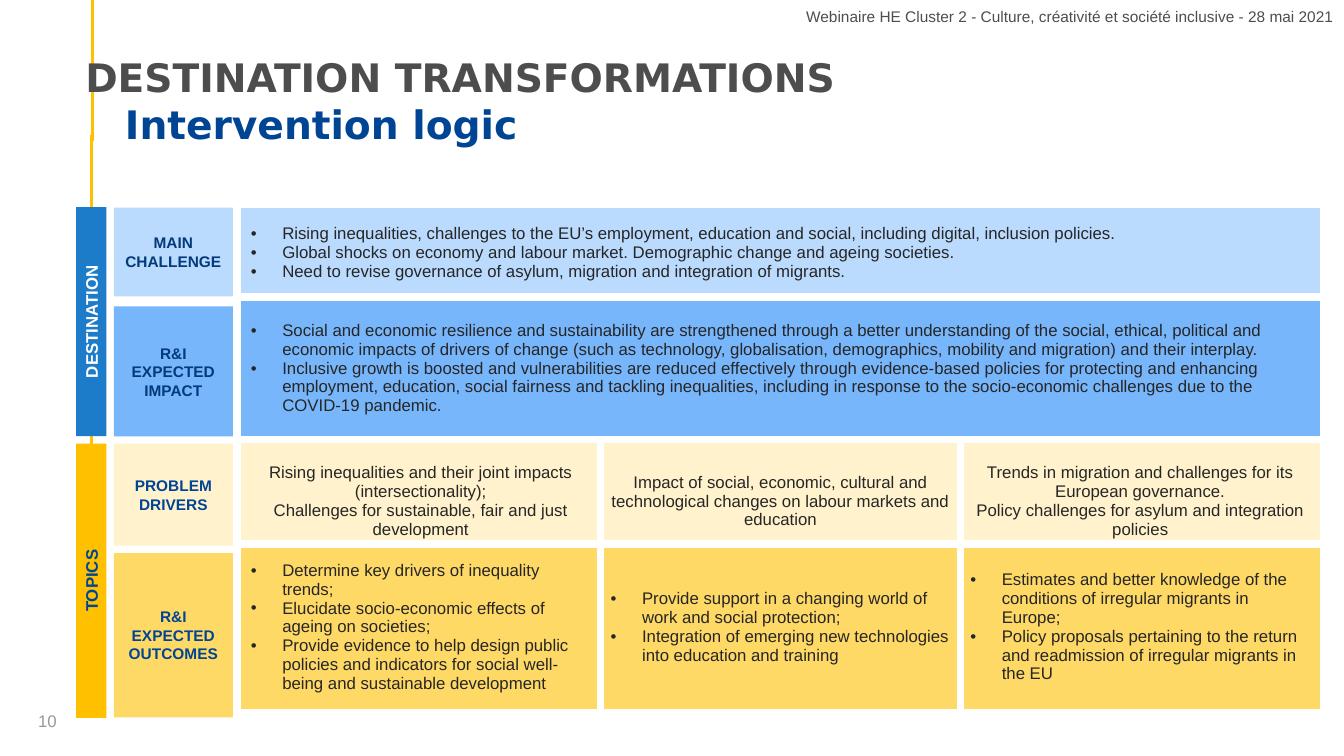
from lxml import etree
from pptx import Presentation
from pptx.dml.color import RGBColor
from pptx.enum.shapes import MSO_CONNECTOR, MSO_SHAPE
from pptx.enum.text import MSO_ANCHOR, PP_ALIGN
from pptx.oxml.ns import qn
from pptx.util import Cm, Pt

LEFT, CENTER, RIGHT = PP_ALIGN.LEFT, PP_ALIGN.CENTER, PP_ALIGN.RIGHT
MIDDLE = MSO_ANCHOR.MIDDLE
RECTANGLE = MSO_SHAPE.RECTANGLE
STRAIGHT = MSO_CONNECTOR.STRAIGHT

NAVY, DARK_NAVY, GOLD, WHITE = "004494", "023A7A", "FFC000", "FFFFFF"
GRAY, LIGHT_GRAY, INK = "4D4D4D", "979797", "262626"
PALE_BLUE, SKY_BLUE, CREAM, SAND = "BBDBFE", "78B6FC", "FFF2CC", "FFD966"

BANDS = [
    ("DESTINATION", 5.22, 5.77, "1C7CCA", WHITE),
    ("TOPICS", 11.18, 6.91, GOLD, NAVY),
]
LABELS = [
    ("MAIN CHALLENGE", 5.23, 2.24, PALE_BLUE, DARK_NAVY),
    ("R&I EXPECTED IMPACT", 7.72, 3.28, SKY_BLUE, DARK_NAVY),
    ("PROBLEM DRIVERS", 11.18, 2.57, CREAM, NAVY),
    ("R&I EXPECTED OUTCOMES", 13.94, 4.14, SAND, NAVY),
]
ROWS = [
    (2.26, PALE_BLUE, True, [[
        "Rising inequalities, challenges to the EU’s employment, education and social, "
        "including digital, inclusion policies.",
        "Global shocks on economy and labour market. Demographic change and ageing societies.",
        "Need to revise governance of asylum, migration and integration of migrants."]]),
    (3.58, SKY_BLUE, True, [[
        "Social and economic resilience and sustainability are strengthened through a better "
        "understanding of the social, ethical, political and economic impacts of drivers of change "
        "(such as technology, globalisation, demographics, mobility and migration) and their interplay.",
        "Inclusive growth is boosted and vulnerabilities are reduced effectively through "
        "evidence-based policies for protecting and enhancing employment, education, social fairness "
        "and tackling inequalities, including in response to the socio-economic challenges due to the "
        "COVID-19 pandemic."]]),
    (2.59, CREAM, False, [
        ["Rising inequalities and their joint impacts (intersectionality);",
         "Challenges for sustainable, fair and just development"],
        ["Impact of social, economic, cultural and technological changes on labour markets "
         "and education"],
        ["Trends in migration and challenges for its European governance.",
         "Policy challenges for asylum and integration policies"]]),
    (4.19, SAND, True, [
        ["Determine key drivers of inequality trends;",
         "Elucidate socio-economic effects of ageing on societies;",
         "Provide evidence to help design public policies and indicators for social well-being "
         "and sustainable development"],
        ["Provide support in a changing world of work and social protection;",
         "Integration of emerging new technologies into education and training"],
        ["Estimates and better knowledge of the conditions of irregular migrants in Europe;",
         "Policy proposals pertaining to the return and readmission of irregular migrants in the EU"]]),
]


def color(hex_string):
    """Return the colour for a hex string."""
    return RGBColor.from_string(hex_string)


def style_font(font, size, hex_string, bold=False, name="Arial"):
    """Set the look of a paragraph or run font."""
    font.name, font.size, font.bold = name, Pt(size), bold
    font.color.rgb = color(hex_string)


def set_indent(paragraph, indent, bullet=None):
    """Give a paragraph a hanging indent and, if asked, a bullet."""
    properties = paragraph._p.get_or_add_pPr()
    properties.set("marL", str(Cm(indent)))
    properties.set("indent", str(-Cm(indent)))
    if bullet:
        etree.SubElement(properties, qn("a:buFont")).set("typeface", "Arial")
        etree.SubElement(properties, qn("a:buChar")).set("char", bullet)


def add_text(slide, box, text, size, hex_string, alignment=LEFT):
    """Add a one-paragraph text box."""
    frame = slide.shapes.add_textbox(*map(Cm, box)).text_frame
    frame.word_wrap = True
    paragraph = frame.paragraphs[0]
    paragraph.text = text
    paragraph.alignment = alignment
    style_font(paragraph.font, size, hex_string)


def add_title(slide, box):
    """Add the two-line title with a hanging second line."""
    frame = slide.shapes.add_textbox(*map(Cm, box)).text_frame
    frame.word_wrap = True
    paragraph = frame.paragraphs[0]
    set_indent(paragraph, 1)
    for text, hex_string in [("DESTINATION TRANSFORMATIONS", GRAY), ("Intervention logic", NAVY)]:
        if paragraph.runs:
            paragraph.add_line_break()
        run = paragraph.add_run()
        run.text = text
        style_font(run.font, 28, hex_string, True, "DejaVu Sans")


def add_rule(slide, left, top, bottom):
    """Add a vertical gold line."""
    line = slide.shapes.add_connector(STRAIGHT, Cm(left), Cm(top), Cm(left), Cm(bottom))
    line.line.color.rgb = color(GOLD)
    line.line.width = Pt(2.25)
    etree.SubElement(line._element.spPr, qn("a:effectLst"))


def add_block(slide, box, text, size, fill, text_color, upright=False):
    """Add a filled label that covers the box, reading upwards if upright."""
    left, top, width, height = box
    if upright:
        left, top = left + (width - height) / 2, top + (height - width) / 2
        width, height = height, width
    shape = slide.shapes.add_shape(RECTANGLE, Cm(left), Cm(top), Cm(width), Cm(height))
    shape.rotation = 270 if upright else 0
    shape.shadow.inherit = False
    shape.fill.solid()
    shape.fill.fore_color.rgb = color(fill)
    shape.line.fill.background()
    frame = shape.text_frame
    frame.word_wrap = True
    frame.vertical_anchor = MIDDLE
    paragraph = frame.paragraphs[0]
    paragraph.text = text
    paragraph.alignment = CENTER
    style_font(paragraph.font, size, text_color, True)


def set_borders(cell, sides):
    """Draw thick white borders on the named sides of a cell."""
    properties = cell._tc.get_or_add_tcPr()
    for side in sides:
        border = etree.SubElement(properties, qn("a:ln" + side), w=str(Pt(6)))
        fill = etree.SubElement(border, qn("a:solidFill"))
        etree.SubElement(fill, qn("a:srgbClr")).set("val", WHITE)


def fill_cell(cell, texts, bulleted):
    """Write the paragraphs of a cell as bullets or centred text."""
    cell.vertical_anchor = MIDDLE
    if not bulleted:
        cell.margin_top = Cm(0.61)
    for index, text in enumerate(texts):
        frame = cell.text_frame
        paragraph = frame.add_paragraph() if index else frame.paragraphs[0]
        paragraph.text = text
        if bulleted:
            set_indent(paragraph, 0.79, "•")
        else:
            paragraph.alignment = CENTER
        style_font(paragraph.font, 12, INK)


def add_logic_table(slide, box):
    """Add the table of challenges, impacts, drivers and outcomes."""
    column_count = 3
    table = slide.shapes.add_table(len(ROWS), column_count, *map(Cm, box)).table
    table.first_row = table.horz_banding = False
    for column in table.columns:
        column.width = Cm(box[2] / column_count)
    for row, (height, fill, bulleted, contents) in enumerate(ROWS):
        table.rows[row].height = Cm(height)
        merged = len(contents) == 1
        if merged:
            table.cell(row, 0).merge(table.cell(row, column_count - 1))
        for column in range(column_count):
            cell = table.cell(row, column)
            inner = {"L": column > 0 and not merged,
                     "R": column < column_count - 1 and not merged,
                     "T": row > 0, "B": row < len(ROWS) - 1}
            set_borders(cell, [side for side, shown in inner.items() if shown])
            cell.fill.solid()
            cell.fill.fore_color.rgb = color(fill)
        for column, texts in enumerate(contents):
            fill_cell(table.cell(row, column), texts, bulleted)


def build_slide(presentation):
    """Build the intervention logic slide."""
    slide = presentation.slides.add_slide(presentation.slide_layouts[6])
    add_rule(slide, 2.34, 0, 3.56)
    add_logic_table(slide, (6.07, 5.23, 27.2, 12.62))
    add_text(slide, (0.71, 17.78, 7.62, 1.02), "10", 12, LIGHT_GRAY)
    add_rule(slide, 2.31, 3.4, 13.61)
    for text, top, height, fill, text_color in LABELS:
        add_block(slide, (2.87, top, 3, height), text, 11, fill, text_color)
    for text, top, height, fill, text_color in BANDS:
        add_block(slide, (1.92, top, 0.76, height), text, 12, fill, text_color, upright=True)
    add_title(slide, (1.9, 1.22, 21.44, 2.64))
    add_text(slide, (19.94, 0.05, 13.93, 0.84),
             "Webinaire HE Cluster 2 - Culture, créativité et société inclusive - 28 mai 2021",
             11, GRAY, RIGHT)


def main():
    """Create and save the presentation."""
    presentation = Presentation()
    presentation.slide_width, presentation.slide_height = Cm(33.87), Cm(19.05)
    build_slide(presentation)
    presentation.save("out.pptx")


if __name__ == "__main__":
    main()
